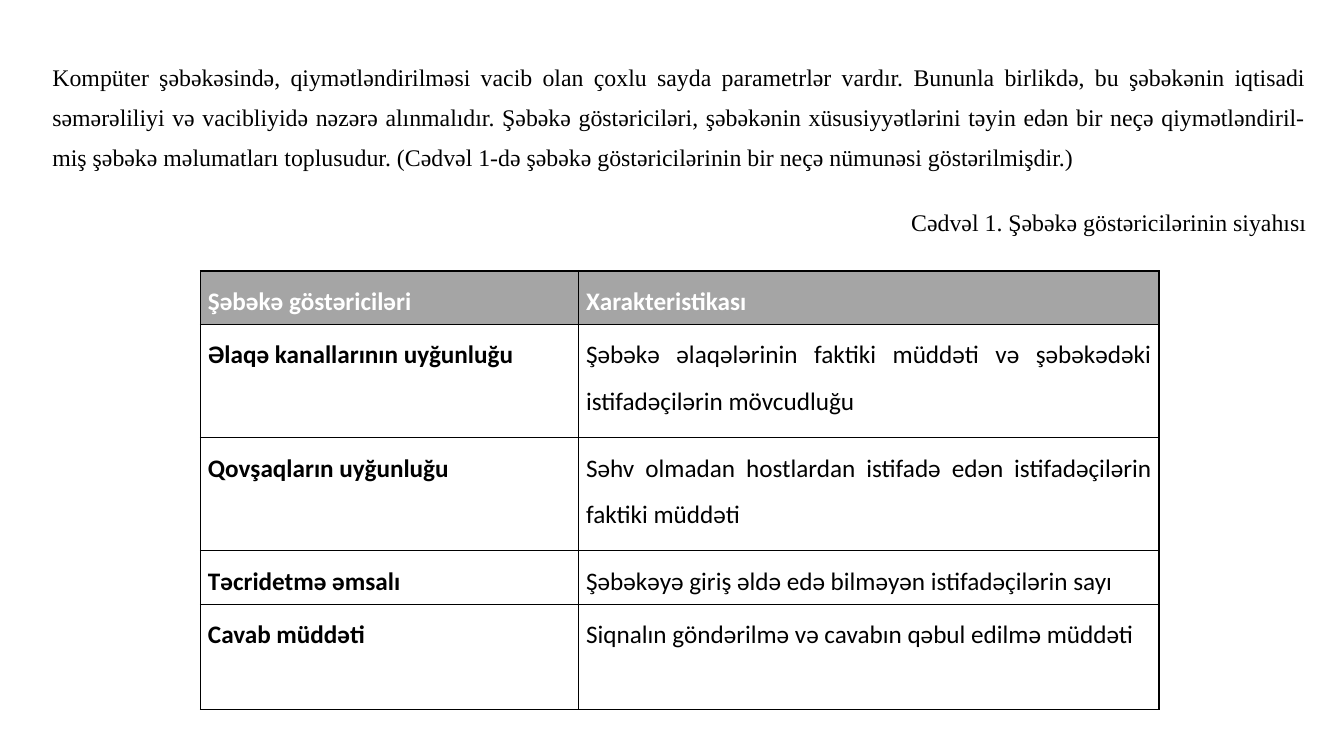
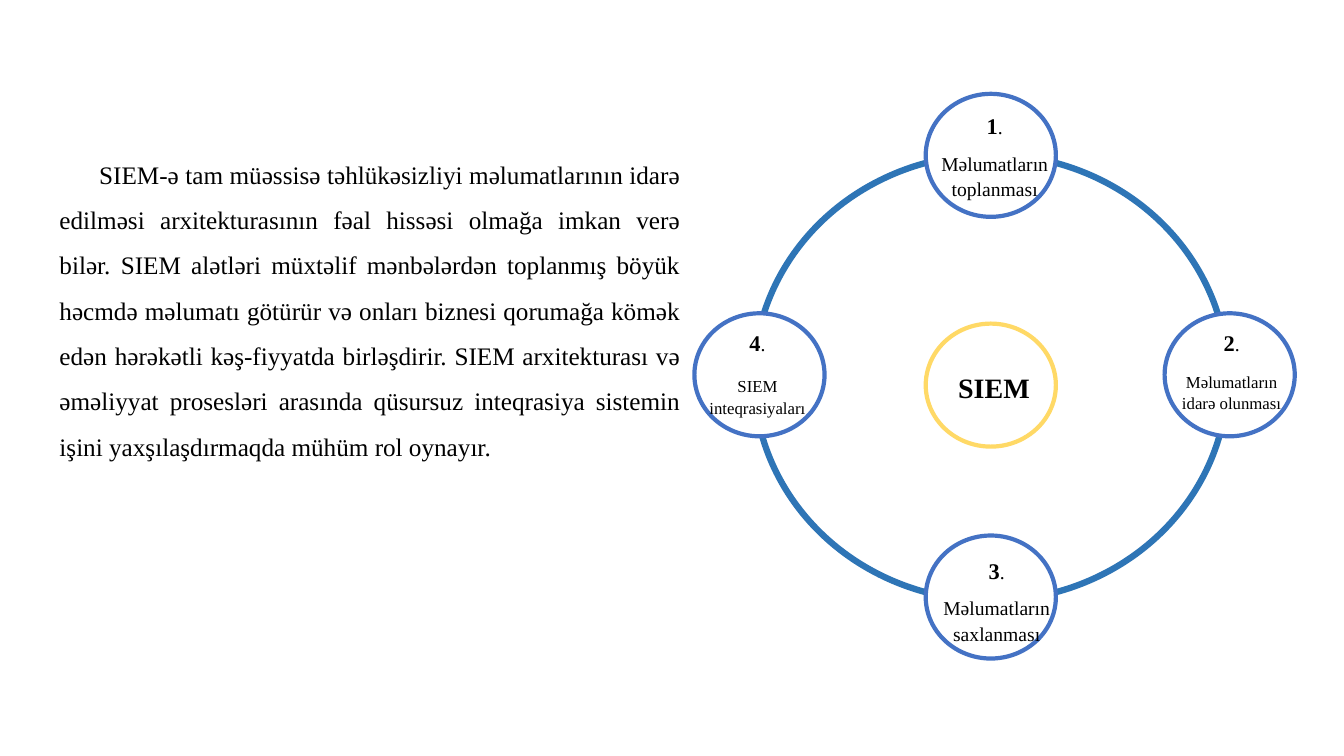
from dataclasses import dataclass

import pptx
import pptx.dml.color
import pptx.enum.shapes
import pptx.enum.text
import pptx.oxml
import pptx.oxml.ns
import pptx.util

Cm = pptx.util.Cm
Pt = pptx.util.Pt
ALIGN = pptx.enum.text.PP_ALIGN


@dataclass(frozen=True)
class Theme:
    serif: str = "Times New Roman"
    sans: str = "Calibri"
    ink: str = "000000"
    paper: str = "FFFFFF"
    header: str = "A5A5A5"
    ring: str = "2E75B6"
    stage: str = "4472C4"
    hub: str = "FFD966"
    intro_size: int = 17
    body_size: int = 18
    number_size: int = 16
    label_size: int = 14
    small_label_size: int = 12
    hub_size: int = 20


@dataclass(frozen=True)
class Box:
    """A region in centimetres."""
    left: float
    top: float
    width: float
    height: float

    def lengths(self):
        return Cm(self.left), Cm(self.top), Cm(self.width), Cm(self.height)


@dataclass(frozen=True)
class Stage:
    """A circle placed by its offset from the ring centre, with its text shift."""
    number: str
    lines: tuple
    size: int
    gap: int
    x: float
    y: float
    text_dx: float
    text_dy: float


THEME = Theme()

INTRO = (
    "Kompüter şəbəkəsində, qiymətləndirilməsi vacib olan çoxlu sayda parametrlər vardır. "
    "Bununla birlikdə, bu şəbəkənin iqtisadi səmərəliliyi və vacibliyidə nəzərə alınmalıdır. "
    "Şəbəkə göstəriciləri, şəbəkənin xüsusiyyətlərini təyin edən bir neçə qiymətləndiril-miş "
    "şəbəkə məlumatları toplusudur. (Cədvəl 1-də şəbəkə göstəricilərinin bir neçə nümunəsi "
    "göstərilmişdir.)"
)
CAPTION = "Cədvəl 1. Şəbəkə göstəricilərinin siyahısı"

INDICATORS = [
    ("Şəbəkə göstəriciləri", "Xarakteristikası"),
    ("Əlaqə kanallarının uyğunluğu",
     "Şəbəkə əlaqələrinin faktiki müddəti və şəbəkədəki istifadəçilərin mövcudluğu"),
    ("Qovşaqların uyğunluğu",
     "Səhv olmadan hostlardan istifadə edən istifadəçilərin faktiki müddəti"),
    ("Təcridetmə əmsalı", "Şəbəkəyə giriş əldə edə bilməyən istifadəçilərin sayı"),
    ("Cavab müddəti", "Siqnalın göndərilmə və cavabın qəbul edilmə müddəti"),
]
COLUMN_WIDTHS = (9.53, 14.63)
ROW_HEIGHTS = (1.35, 2.85, 2.85, 1.35, 2.64)
JUSTIFIED_DETAILS = (0, 1, 2)
JUSTIFIED_NAMES = (0, 3, 4)

SIEM_TEXT = (
    "SIEM-ə tam müəssisə təhlükəsizliyi məlumatlarının idarə edilməsi arxitekturasının fəal "
    "hissəsi olmağa imkan verə bilər. SIEM alətləri müxtəlif mənbələrdən toplanmış böyük "
    "həcmdə məlumatı götürür və onları biznesi qorumağa kömək edən hərəkətli kəş-fiyyatda "
    "birləşdirir. SIEM arxitekturası və əməliyyat prosesləri arasında qüsursuz inteqrasiya "
    "sistemin işini yaxşılaşdırmaqda mühüm rol oynayır."
)
STAGES = [
    Stage("1", ("Məlumatların", "toplanması"), THEME.label_size, 8, 0, -5.6, 0.1, 0.28),
    Stage("2", ("Məlumatların", "idarə olunması"), THEME.small_label_size, 10,
          6.02, -0.07, 0.05, 0.23),
    Stage("3", ("Məlumatların", "saxlanması"), THEME.label_size, 8, 0, 5.53, 0.15, 0.36),
    Stage("4", ("SIEM", "inteqrasiyaları"), THEME.small_label_size, 13,
          -5.83, -0.07, -0.05, 0.23),
]
CIRCLE_WIDTH, CIRCLE_HEIGHT = 3.28, 3.1
LABEL_WIDTH, LABEL_HEIGHT = 4, 2.87
HUB_DY = 0.19


def rgb(value):
    return pptx.dml.color.RGBColor.from_string(value)


def format_run(run, size, font=THEME.serif, color=THEME.ink, bold=False):
    run.font.size = Pt(size)
    run.font.name = font
    run.font.color.rgb = rgb(color)
    run.font.bold = bold


def format_paragraph(paragraph, align, spacing, before=0, after=0):
    paragraph.alignment = align
    paragraph.line_spacing = spacing
    paragraph.space_before = Pt(before)
    paragraph.space_after = Pt(after)


def add_text_frame(shapes, box):
    frame = shapes.add_textbox(*box.lengths()).text_frame
    frame.word_wrap = True
    return frame


def add_intro(slide, box):
    frame = add_text_frame(slide.shapes, box)
    frame.text = INTRO + "\n" + CAPTION
    for paragraph, align in zip(frame.paragraphs, (ALIGN.JUSTIFY, ALIGN.RIGHT)):
        format_paragraph(paragraph, align, 1.4, before=10, after=8)
        format_run(paragraph.runs[0], THEME.intro_size)


def add_borders(cell):
    properties = cell._tc.get_or_add_tcPr()
    for side in ("lnL", "lnR", "lnT", "lnB"):
        properties.append(pptx.oxml.parse_xml(
            f'<a:{side} {pptx.oxml.ns.nsdecls("a")} w="{Pt(1)}"><a:solidFill>'
            f'<a:srgbClr val="{THEME.ink}"/></a:solidFill></a:{side}>'))


def fill_cell(cell, text, align, is_header, bold):
    cell.margin_left = cell.margin_right = Cm(0.19)
    cell.margin_top = cell.margin_bottom = 0
    add_borders(cell)
    if is_header:
        cell.fill.solid()
        cell.fill.fore_color.rgb = rgb(THEME.header)
    else:
        cell.fill.background()
    cell.text_frame.text = text
    paragraph = cell.text_frame.paragraphs[0]
    format_paragraph(paragraph, align, 1.5, after=8)
    format_run(paragraph.runs[0], THEME.body_size, THEME.sans,
               THEME.paper if is_header else THEME.ink, bold)


def add_indicator_table(slide, box):
    table = slide.shapes.add_table(
        len(INDICATORS), len(COLUMN_WIDTHS), *box.lengths()).table
    for column, width in zip(table.columns, COLUMN_WIDTHS):
        column.width = Cm(width)
    for row, height in zip(table.rows, ROW_HEIGHTS):
        row.height = Cm(height)
    for r, texts in enumerate(INDICATORS):
        for c, text in enumerate(texts):
            justified = r in (JUSTIFIED_DETAILS if c else JUSTIFIED_NAMES)
            fill_cell(table.cell(r, c), text, ALIGN.JUSTIFY if justified else ALIGN.LEFT,
                      is_header=r == 0, bold=r == 0 or c == 0)


def add_siem_text(slide, box):
    frame = add_text_frame(slide.shapes, box)
    frame.text = SIEM_TEXT
    paragraph = frame.paragraphs[0]
    format_paragraph(paragraph, ALIGN.JUSTIFY, 1.5)
    paragraph._p.get_or_add_pPr().set("indent", str(Cm(1)))
    format_run(paragraph.runs[0], THEME.body_size)


def add_ellipse(shapes, box, line_color, line_width, fill_color=None):
    ellipse = shapes.add_shape(pptx.enum.shapes.MSO_SHAPE.OVAL, *box.lengths())
    ellipse.shadow.inherit = False
    if fill_color:
        ellipse.fill.solid()
        ellipse.fill.fore_color.rgb = rgb(fill_color)
    else:
        ellipse.fill.background()
    ellipse.line.color.rgb = rgb(line_color)
    ellipse.line.width = Pt(line_width)


def add_circle(shapes, x, y, line_color, text_dx, text_dy):
    """Draw a circle centred on x, y and return the text frame over it."""
    top = y - CIRCLE_HEIGHT / 2
    add_ellipse(shapes, Box(x - CIRCLE_WIDTH / 2, top, CIRCLE_WIDTH, CIRCLE_HEIGHT),
                line_color, 3, THEME.paper)
    return add_text_frame(shapes, Box(x - LABEL_WIDTH / 2 + text_dx, top + text_dy,
                                      LABEL_WIDTH, LABEL_HEIGHT))


def add_stage(shapes, stage, center_x, center_y):
    frame = add_circle(shapes, center_x + stage.x, center_y + stage.y, THEME.stage,
                       stage.text_dx, stage.text_dy)
    frame.text = "\n".join((stage.number, *stage.lines))
    heading, *labels = frame.paragraphs
    format_paragraph(heading, ALIGN.CENTER, 1.07, after=stage.gap)
    format_run(heading.runs[0], THEME.number_size, bold=True)
    dot = heading.add_run()
    dot.text = "."
    format_run(dot, THEME.label_size)
    for label in labels:
        format_paragraph(label, ALIGN.CENTER, 1.07)
        format_run(label.runs[0], stage.size)


def add_siem_cycle(slide, box):
    """Draw the ring in the box, with the stages on it and the hub inside."""
    shapes = slide.shapes.add_group_shape().shapes
    center_x, center_y = box.left + box.width / 2, box.top + box.height / 2
    add_ellipse(shapes, box, THEME.ring, 4.5)
    for stage in STAGES:
        add_stage(shapes, stage, center_x, center_y)
    frame = add_circle(shapes, center_x, center_y + HUB_DY, THEME.hub, 0.08, 1)
    frame.text = "SIEM"
    format_paragraph(frame.paragraphs[0], ALIGN.CENTER, 1.07, after=8)
    format_run(frame.paragraphs[0].runs[0], THEME.hub_size, bold=True)


def build_indicator_slide(slide):
    add_indicator_table(slide, Box(5.05, 6.83, sum(COLUMN_WIDTHS), sum(ROW_HEIGHTS)))
    add_intro(slide, Box(1.07, 1.17, 32.11, 5.97))


def build_siem_slide(slide):
    add_siem_cycle(slide, Box(19, 3.89, 11.94, 11.25))
    add_siem_text(slide, Box(1.25, 3.5, 16.15, 8.74))


def main():
    presentation = pptx.Presentation()
    presentation.slide_width, presentation.slide_height = Cm(33.87), Cm(19.05)
    blank = presentation.slide_layouts[6]
    for build in (build_indicator_slide, build_siem_slide):
        build(presentation.slides.add_slide(blank))
    presentation.save("out.pptx")


if __name__ == "__main__":
    main()
